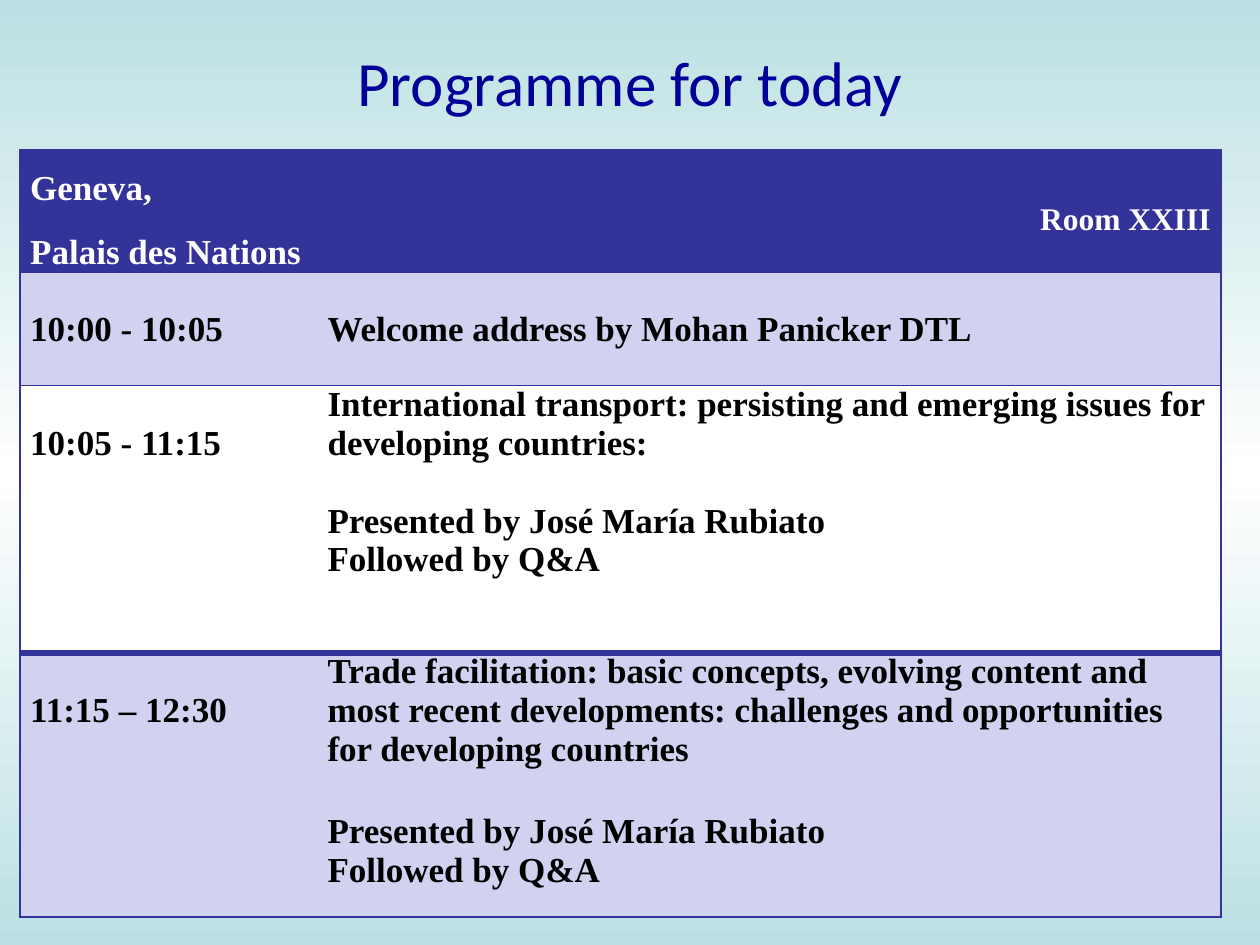
import copy
import pptx
import pptx.dml.color
import pptx.enum.text
import pptx.oxml
import pptx.oxml.ns
import pptx.util
from pptx.util import Inches

ALIGN = pptx.enum.text.PP_ALIGN
ANCHOR = pptx.enum.text.MSO_ANCHOR
NAVY, LAVENDER, WHITE, BLACK = "333399", "D1D1F0", "FFFFFF", "000000"
SERIF = "Times New Roman"
LINE = 22


def color(value):
    return pptx.dml.color.RGBColor.from_string(value)


def write(para, text, font=SERIF, size=20, fill=BLACK, bold=True,
          align=ALIGN.LEFT, before=0, spacing=1.0):
    para.alignment = align
    para.space_before = pptx.util.Pt(before)
    para.line_spacing = spacing
    span = para.add_run()
    span.text = text
    span.font.name = font
    span.font.size = pptx.util.Pt(size)
    span.font.bold = bold
    span.font.color.rgb = color(fill)


class Programme:
    def __init__(self, deck):
        self.slide = deck.slides.add_slide(deck.slide_layouts[5])

    def background(self, edge, middle):
        fill = self.slide.background.fill
        fill.gradient()
        fill.gradient_angle = 90
        stops = self.slide.element.xpath(".//a:gsLst")[0]
        stops.insert(1, copy.deepcopy(stops[0]))
        for stop, value, position in zip(fill.gradient_stops, (edge, middle, edge), (0, 0.5, 1)):
            stop.color.rgb = color(value)
            stop.position = position

    def title(self, text, left, top, width, height):
        box = self.slide.shapes.title
        box.left, box.top, box.width, box.height = map(Inches, (left, top, width, height))
        frame = box.text_frame
        frame.margin_left = frame.margin_right = 0
        frame.vertical_anchor = ANCHOR.MIDDLE
        write(frame.paragraphs[0], text, font="Calibri", size=36, fill="000099",
              bold=False, align=ALIGN.CENTER)

    def table(self, left, top, widths, heights):
        frame = self.slide.shapes.add_table(
            len(heights), len(widths), Inches(left), Inches(top),
            Inches(sum(widths)), Inches(sum(heights)))
        table = frame.table
        table.first_row = table.horz_banding = False
        for column, width in zip(table.columns, widths):
            column.width = Inches(width)
        for row, height in zip(table.rows, heights):
            row.height = Inches(height)
        return table

    def cell(self, cell, lines, fill, borders, margin_top=0.0, anchor=ANCHOR.TOP):
        cell.margin_left = cell.margin_right = Inches(0.08)
        cell.margin_top, cell.margin_bottom = Inches(margin_top), 0
        cell.vertical_anchor = anchor
        cell.fill.solid()
        cell.fill.fore_color.rgb = color(fill)
        for index, (text, style) in enumerate(lines):
            frame = cell.text_frame
            para = frame.add_paragraph() if index else frame.paragraphs[0]
            write(para, text, **style)
        self.borders(cell, borders)

    def borders(self, cell, borders):
        namespace = pptx.oxml.ns.nsdecls("a")
        properties = cell._tc.get_or_add_tcPr()
        for index, side in enumerate("LRTB"):
            points = borders[side]
            paint = f'<a:solidFill><a:srgbClr val="{NAVY}"/></a:solidFill>' if points else "<a:noFill/>"
            line = f'<a:ln{side} {namespace} w="{pptx.util.Pt(points)}">{paint}</a:ln{side}>'
            properties.insert(index, pptx.oxml.parse_xml(line))


def main():
    deck = pptx.Presentation()
    deck.slide_width, deck.slide_height = Inches(10), Inches(7.5)
    programme = Programme(deck)
    programme.background("BBE0E3", WHITE)
    programme.title("Programme for today", 0.75, 0.17, 8.5, 0.95)

    heading = dict(fill=WHITE, before=3, spacing=1.5)
    room = dict(fill=WHITE, size=18, align=ALIGN.RIGHT, spacing=1.5)
    presenter = "Presented by José María Rubiato"
    follow_up = ("Followed by Q&A", {})
    rows = [
        (NAVY, [("Geneva,", heading), ("Palais des Nations", heading)],
         [("Room XXIII", room)]),
        (LAVENDER, [("10:00 - 10:05", {})],
         [("Welcome address by Mohan Panicker DTL", {})]),
        (WHITE, [("10:05 - 11:15", {})],
         [("International transport: persisting and emerging issues for developing countries:", {}),
          (presenter, dict(before=LINE)), follow_up]),
        (LAVENDER, [("11:15 – 12:30", {})],
         [("Trade facilitation: basic concepts, evolving content and most recent developments: "
           "challenges and opportunities for developing countries", {}),
          (presenter, dict(before=LINE + 2.5)), follow_up]),
    ]
    rules = [1, 1, 1, 4, 1]
    table = programme.table(0.16, 1.19, [2.36, 7.17], [0.97, 0.9, 2.12, 2.1])
    for row, (fill, *contents) in enumerate(rows):
        for column, lines in enumerate(contents):
            borders = dict(L=1 - column, R=column, T=rules[row], B=rules[row + 1])
            lowered = row > 0 and len(lines) == 1
            programme.cell(table.cell(row, column), lines, fill, borders,
                           margin_top=LINE / 72 if lowered else 0,
                           anchor=ANCHOR.TOP if row else ANCHOR.MIDDLE)
    deck.save("out.pptx")


if __name__ == "__main__":
    main()
